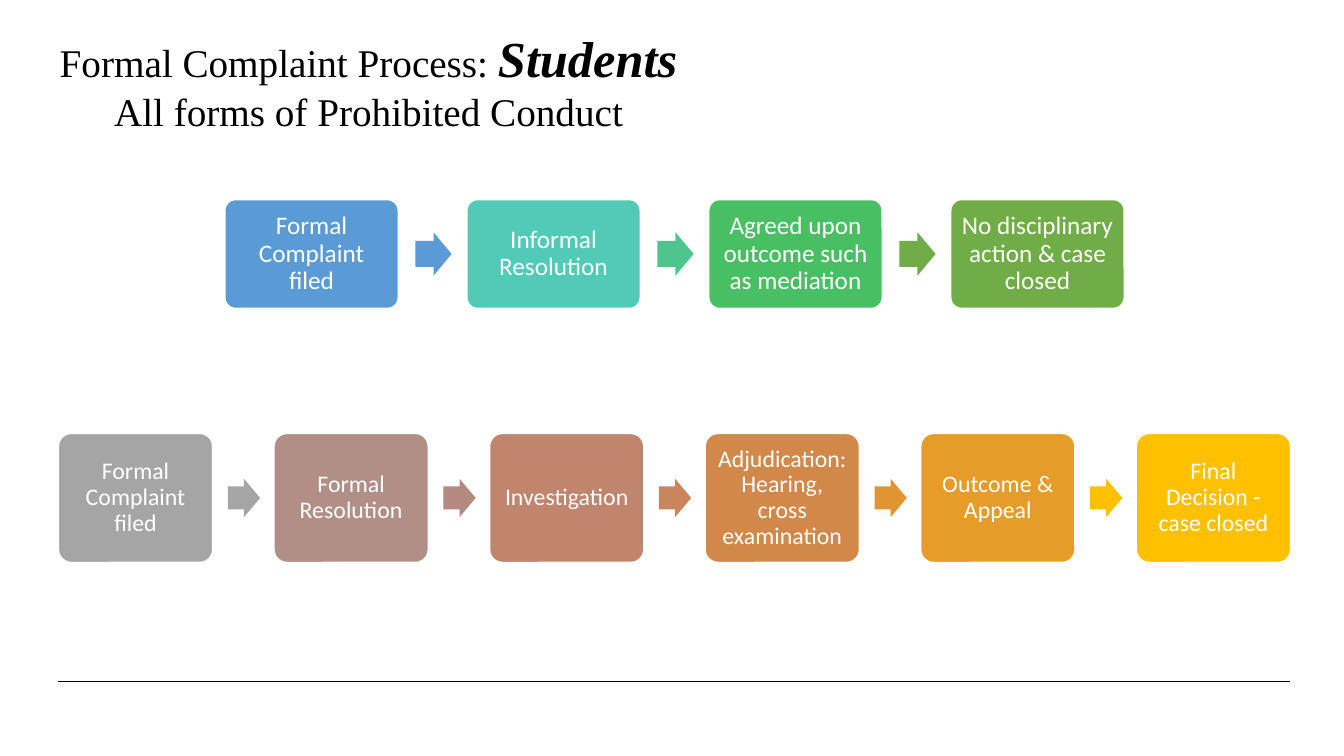
from lxml import etree
from pptx import Presentation
from pptx import util as u
from pptx.dml.color import RGBColor
from pptx.enum import shapes, text
from pptx.oxml.ns import qn

COLORS = {
    "black": "000000", "white": "FFFFFF",
    "blue": "5B9BD5", "teal": "52CAB8", "sea": "4DC58D",
    "emerald": "49BF64", "green": "70AD47",
    "gray": "A5A5A5", "mauve": "B18E86", "rose": "B48A80",
    "clay": "C1846D", "copper": "C9865C", "rust": "D18849",
    "amber": "E09432", "orange": "E59C28", "gold": "FFC000",
}


class SlideBuilder:
    heading_font = "Times New Roman"
    body_font = "Calibri"

    def __init__(self, slide):
        self.s = slide

    def color(self, name):
        return RGBColor.from_string(COLORS[name])

    def apply(self, target, values):
        for name, value in values.items():
            setattr(target, name, value)

    def run(self, p, content, color, **font):
        r = p.add_run()
        r.text = content
        self.apply(r.font, font)
        r.font.color.rgb = self.color(color)

    def rule(self, x1, x2, y):
        ln = self.s.shapes.add_connector(
            shapes.MSO_CONNECTOR.STRAIGHT,
            u.Inches(x1), u.Inches(y), u.Inches(x2), u.Inches(y))
        ln.line.color.rgb = self.color("black")
        ln.line.width = u.Pt(0.75)
        etree.SubElement(ln._element.spPr, qn("a:effectLst"))

    def title(self, x, y, w, h, lines):
        sp = self.s.shapes.add_textbox(*map(u.Inches, (x, y, w, h)))
        tf = sp.text_frame
        tf.word_wrap = True
        for i, line in enumerate(lines):
            p = tf.add_paragraph() if i else tf.paragraphs[0]
            p.alignment = text.PP_ALIGN.CENTER
            for content, size, strong in line:
                self.run(p, content, "black", name=self.heading_font,
                         size=u.Pt(size), bold=strong, italic=strong)

    def shape(self, kind, x, y, w, h, fill, adjustments):
        sp = self.s.shapes.add_shape(kind, *map(u.Inches, (x, y, w, h)))
        sp.shadow.inherit = False
        sp.fill.solid()
        sp.fill.fore_color.rgb = self.color(fill)
        sp.line.fill.background()
        for i, value in enumerate(adjustments):
            sp.adjustments[i] = value
        return sp

    def step(self, x, y, w, h, fill, content, size):
        sp = self.shape(shapes.MSO_SHAPE.ROUNDED_RECTANGLE,
                        x, y, w, h, fill, [0.1])
        sp.line.color.rgb = self.color("white")
        sp.line.width = u.Pt(1)
        tf = sp.text_frame
        inset = u.Inches(0.07)
        self.apply(tf, {
            "word_wrap": True, "vertical_anchor": text.MSO_ANCHOR.MIDDLE,
            "margin_left": inset, "margin_right": inset,
            "margin_top": inset, "margin_bottom": inset})
        p = tf.paragraphs[0]
        self.apply(p, {"alignment": text.PP_ALIGN.CENTER,
                       "line_spacing": 0.9})
        self.run(p, content, "white", name=self.body_font, size=u.Pt(size))

    def arrow(self, x, y, w, h, fill):
        self.shape(shapes.MSO_SHAPE.RIGHT_ARROW, x, y, w, h, fill, [0.6, 0.5])

    def flow(self, left, right, top, box, arrow, gap, size, steps, arrows):
        """Spread the steps evenly from left to right, an arrow after each."""
        w, h = box
        arrow_w, arrow_h = arrow
        pitch = (right - left - w) / (len(steps) - 1)
        for i, (content, fill) in enumerate(steps):
            x = left + i * pitch
            self.step(x, top, w, h, fill, content, size)
            if i < len(arrows):
                self.arrow(x + w + gap, top + (h - arrow_h) / 2,
                           arrow_w, arrow_h, arrows[i])


def main():
    prs = Presentation()
    prs.slide_width, prs.slide_height = u.Inches(13.33), u.Inches(7.5)
    b = SlideBuilder(prs.slides.add_slide(prs.slide_layouts[6]))

    # Footer rule and title
    b.rule(0.58, 12.79, 6.76)
    b.title(0.42, 0.22, 6.47, 1.18, [
        [("Formal Complaint Process: ", 28, False), ("Students", 36, True)],
        [("All forms of Prohibited Conduct", 28, False)],
    ])

    # Informal resolution
    b.flow(2.23, 11.15, 1.98, (1.72, 1.08), (0.36, 0.43), 0.17, 18, [
        ("Formal Complaint filed", "blue"),
        ("Informal Resolution", "teal"),
        ("Agreed upon outcome such as mediation", "emerald"),
        ("No disciplinary action & case closed", "green"),
    ], ["blue", "sea", "green"])

    # Formal resolution
    b.flow(0.58, 12.8, 4.3, (1.53, 1.28), (0.32, 0.38), 0.15, 17, [
        ("Formal Complaint filed", "gray"),
        ("Formal Resolution", "mauve"),
        ("Investigation", "clay"),
        ("Adjudication: Hearing, cross examination", "rust"),
        ("Outcome & Appeal", "orange"),
        ("Final Decision - case closed", "gold"),
    ], ["gray", "rose", "copper", "amber", "gold"])

    prs.save("out.pptx")


if __name__ == "__main__":
    main()
